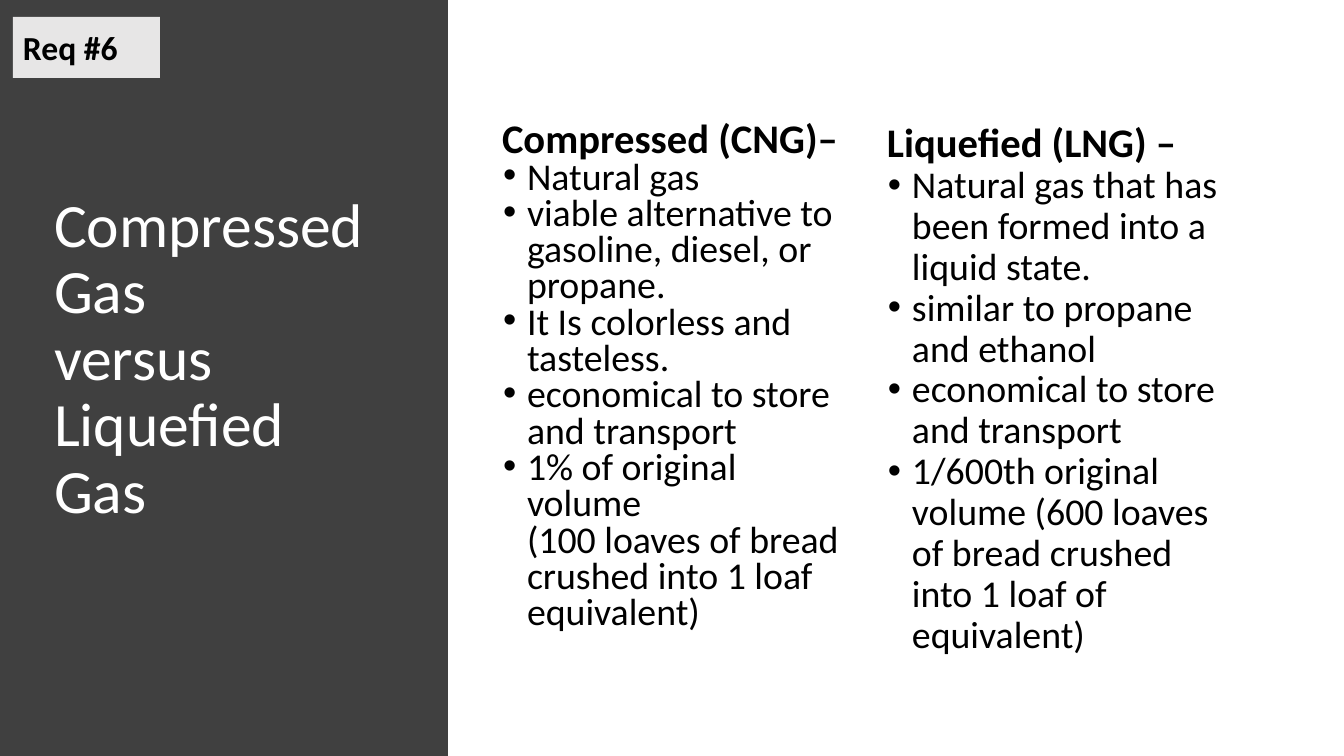
from lxml import etree
from pptx import Presentation
from pptx.dml.color import RGBColor
from pptx.enum.shapes import MSO_SHAPE
from pptx.enum.text import MSO_ANCHOR, MSO_AUTO_SIZE, PP_ALIGN
from pptx.oxml.ns import qn
from pptx.util import Pt

RECT = MSO_SHAPE.RECTANGLE
TOP, MIDDLE = MSO_ANCHOR.TOP, MSO_ANCHOR.MIDDLE
LEFT = PP_ALIGN.LEFT
NO_FIT = MSO_AUTO_SIZE.NONE

# Content
TAG = "Req #6"
TITLE = ["Compressed Gas", "versus", "Liquefied Gas"]
COLUMNS = [
    {"heading": "Compressed (CNG)–", "spacing": 0.8, "bullets": [
        "Natural gas",
        "viable alternative to gasoline, diesel, or propane.",
        "It Is colorless and tasteless.",
        "economical to store and transport",
        "1% of original volume \v(100 loaves of bread crushed into 1 loaf equivalent)",
    ]},
    {"heading": "Liquefied (LNG) –", "spacing": 0.9, "bullets": [
        "Natural gas that has been formed into a liquid state.",
        "similar to propane and ethanol",
        "economical to store and transport",
        "1/600th original volume (600 loaves of bread crushed into 1 loaf of equivalent)",
    ]},
]
COLORS = {"panel": "404040", "tag": "E7E6E6", "light": "FFFFFF", "dark": "000000"}
FONT = "Calibri"

# Layout in px
PX = 914400 / 100.8
WIDTH, HEIGHT = 1344, 756
PANEL = (0, 0, 448, HEIGHT)
TITLE_BOX = (44, 40, 348, 641)
TAG_BOX = (13, 17, 147, 61)
COL_LEFT, COL_TOP, COL_W, COL_H, COL_STEP = 492, 117, 374, 564, 385
INDENT, HANG = 25, 24
PAD_X, PAD_Y, TAG_PAD = 10, 5, 10


def px(n):
    return round(n * PX)


def place(sp, box):
    sp.left, sp.top, sp.width, sp.height = map(px, box)


def add_rect(s, box, color):
    sp = s.shapes.add_shape(RECT, *map(px, box))
    sp.shadow.inherit = False
    sp.fill.solid()
    sp.fill.fore_color.rgb = RGBColor.from_string(COLORS[color])
    sp.line.fill.background()
    return sp


def setup_frame(tf, anchor, pad_y=PAD_Y):
    tf.word_wrap = True
    tf.auto_size = NO_FIT
    tf.vertical_anchor = anchor
    tf.margin_left = tf.margin_right = px(PAD_X)
    tf.margin_top = tf.margin_bottom = px(pad_y)


def add_text(tf, text, size, color="dark", bold=False, spacing=1.0, bullet=False):
    p = tf.paragraphs[0]
    if p.runs:
        p = tf.add_paragraph()
    p.text = text
    p.alignment = LEFT
    p.line_spacing = spacing
    p.space_before = p.space_after = Pt(0)
    for r in p.runs:
        r.font.name, r.font.size, r.font.bold = FONT, Pt(size), bold
        r.font.color.rgb = RGBColor.from_string(COLORS[color])
    # Bullet and hanging indent
    pPr = p._p.get_or_add_pPr()
    pPr.set("marL", str(px(INDENT) if bullet else 0))
    pPr.set("indent", str(-px(HANG) if bullet else 0))
    if bullet:
        clr = etree.SubElement(pPr, qn("a:buClr"))
        etree.SubElement(clr, qn("a:srgbClr"), val=COLORS[color])
        etree.SubElement(pPr, qn("a:buFont"), typeface="Arial")
        etree.SubElement(pPr, qn("a:buChar"), char="•")
    else:
        etree.SubElement(pPr, qn("a:buNone"))


prs = Presentation()
prs.slide_width, prs.slide_height = px(WIDTH), px(HEIGHT)
s = prs.slides.add_slide(prs.slide_layouts[3])

# Dark panel behind the title
title = s.shapes.title
panel = add_rect(s, PANEL, "panel")
title.element.addprevious(panel.element)

# Title
place(title, TITLE_BOX)
setup_frame(title.text_frame, MIDDLE)
for line in TITLE:
    add_text(title.text_frame, line, 44, color="light", spacing=0.9)

# Two comparison columns
for i, col in enumerate(COLUMNS):
    body = s.placeholders[i + 1]
    place(body, (COL_LEFT + i * COL_STEP, COL_TOP, COL_W, COL_H))
    tf = body.text_frame
    setup_frame(tf, TOP)
    add_text(tf, col["heading"], 29, bold=True, spacing=col["spacing"])
    for item in col["bullets"]:
        add_text(tf, item, 27, spacing=col["spacing"], bullet=True)

# Requirement tag
tag = add_rect(s, TAG_BOX, "tag")
setup_frame(tag.text_frame, MIDDLE, pad_y=TAG_PAD)
add_text(tag.text_frame, TAG, 24, bold=True)

prs.save("out.pptx")
